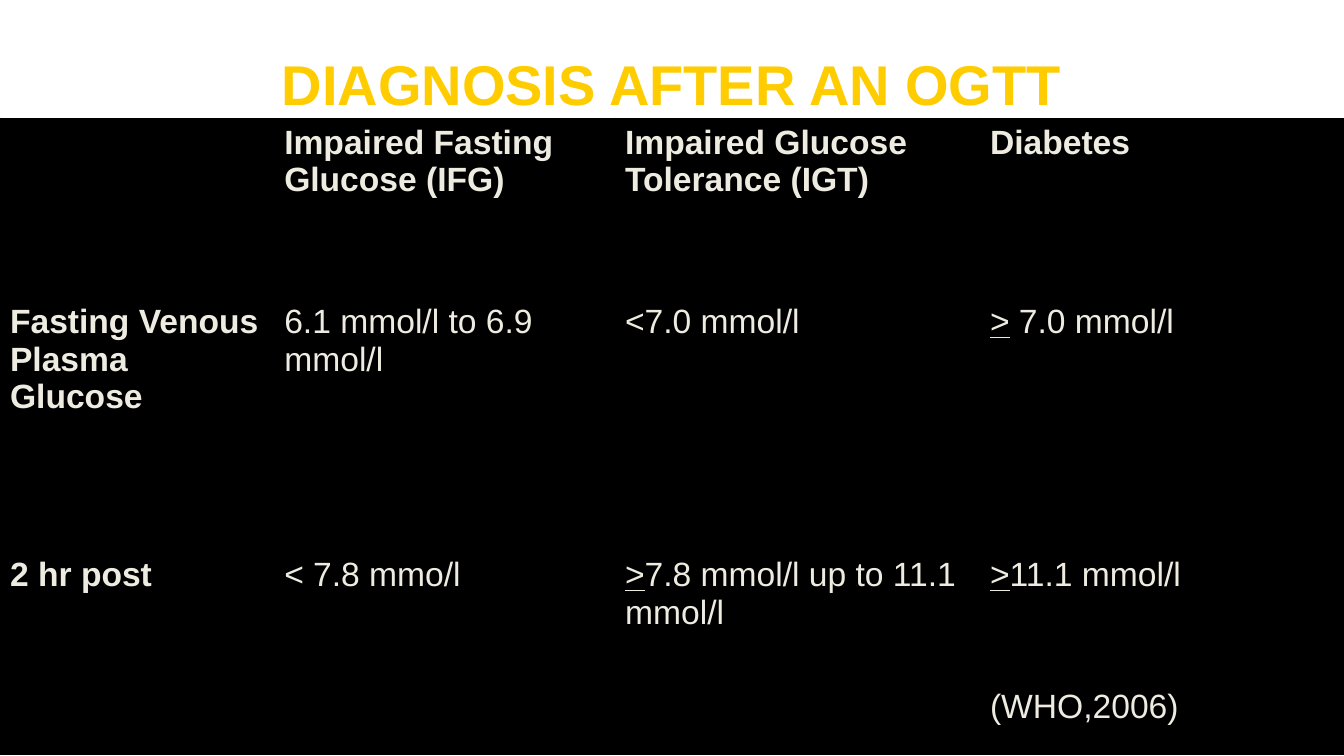
from dataclasses import dataclass

from lxml import etree
from pptx import Presentation
from pptx.dml.color import RGBColor
from pptx.enum.text import MSO_ANCHOR, PP_ALIGN
from pptx.oxml.ns import qn
from pptx.util import Inches, Pt

MID, CENTER = MSO_ANCHOR.MIDDLE, PP_ALIGN.CENTER
BLACK, CREAM, GOLD = "000000", "EEECE1", "FFCC00"
FACE = "Arial"
WIDTHS = (2.72, 3.38, 3.62, 3.62)
HEIGHTS = (1.78, 2.51, 2.01)


@dataclass
class Entry:
    """Text of one table cell, with an optional source below it."""

    text: str = ""
    bold: bool = False
    source: str = ""


ROWS = (
    (
        Entry(),
        Entry("Impaired Fasting Glucose (IFG)", True),
        Entry("Impaired Glucose Tolerance (IGT)", True),
        Entry("Diabetes", True),
    ),
    (
        Entry("Fasting Venous Plasma Glucose", True),
        Entry("6.1 mmol/l to 6.9 mmol/l"),
        Entry("<7.0 mmol/l"),
        Entry("> 7.0 mmol/l"),
    ),
    (
        Entry("2 hr post", True),
        Entry("< 7.8 mmo/l"),
        Entry(">7.8 mmol/l up to 11.1 mmol/l"),
        Entry(">11.1 mmol/l", source="(WHO,2006)"),
    ),
)


def tint(part, color: str) -> None:
    """Give a fill or font colour its hex value."""
    part.rgb = RGBColor.from_string(color)


def style(run, size: float, color: str, bold: bool) -> None:
    """Format one run of text."""
    run.font.name = FACE
    run.font.size = Pt(size)
    run.font.bold = bold
    tint(run.font.color, color)


def border(cell, side: str, width: float) -> None:
    """Draw one black side of a cell."""
    line = etree.SubElement(cell._tc.get_or_add_tcPr(), qn(f"a:ln{side}"), w=str(Pt(width)))
    fill = etree.SubElement(line, qn("a:solidFill"))
    etree.SubElement(fill, qn("a:srgbClr"), val=BLACK)


def write(cell, entry: Entry) -> None:
    """Put the text in a cell, with a leading > underlined."""
    para = cell.text_frame.paragraphs[0]
    if entry.text.startswith(">"):
        para.text = ">"
        para.runs[0].font.underline = True
        para.add_run().text = entry.text[1:]
    elif entry.text:
        para.text = entry.text
    if entry.source:
        note = cell.text_frame.add_paragraph()
        note.text = entry.source
        note.space_before = Pt(67)
    for para in cell.text_frame.paragraphs:
        for run in para.runs:
            style(run, 24, CREAM, entry.bold)


def add_title(slide) -> None:
    """Place and format the slide title."""
    title = slide.shapes.title
    title.left, title.top = Inches(2.41), Inches(0.28)
    title.width, title.height = Inches(8.5), Inches(1.08)
    frame = title.text_frame
    frame.text = "DIAGNOSIS AFTER AN OGTT"
    frame.vertical_anchor = MID
    frame.paragraphs[0].alignment = CENTER
    style(frame.paragraphs[0].runs[0], 40, GOLD, True)


def add_grid(slide) -> None:
    """Build the table of glucose limits."""
    rows, cols = len(HEIGHTS), len(WIDTHS)
    frame = slide.shapes.add_table(
        rows, cols, 0, Inches(1.18), Inches(sum(WIDTHS)), Inches(sum(HEIGHTS))
    )
    grid = frame.table
    for col, width in zip(grid.columns, WIDTHS):
        col.width = Inches(width)
    for row, height in zip(grid.rows, HEIGHTS):
        row.height = Inches(height)
    for y, line in enumerate(ROWS):
        for x, entry in enumerate(line):
            cell = grid.cell(y, x)
            edges = {"L": x == 0, "R": x == cols - 1, "T": y == 0, "B": y == rows - 1}
            for side, outer in edges.items():
                border(cell, side, 2.25 if outer else 1)
            cell.fill.solid()
            tint(cell.fill.fore_color, BLACK)
            write(cell, entry)


def main() -> None:
    """Make the slide and save it."""
    deck = Presentation()
    deck.slide_width, deck.slide_height = Inches(13.33), Inches(7.5)
    slide = deck.slides.add_slide(deck.slide_layouts[5])
    add_title(slide)
    add_grid(slide)
    deck.save("out.pptx")


if __name__ == "__main__":
    main()
